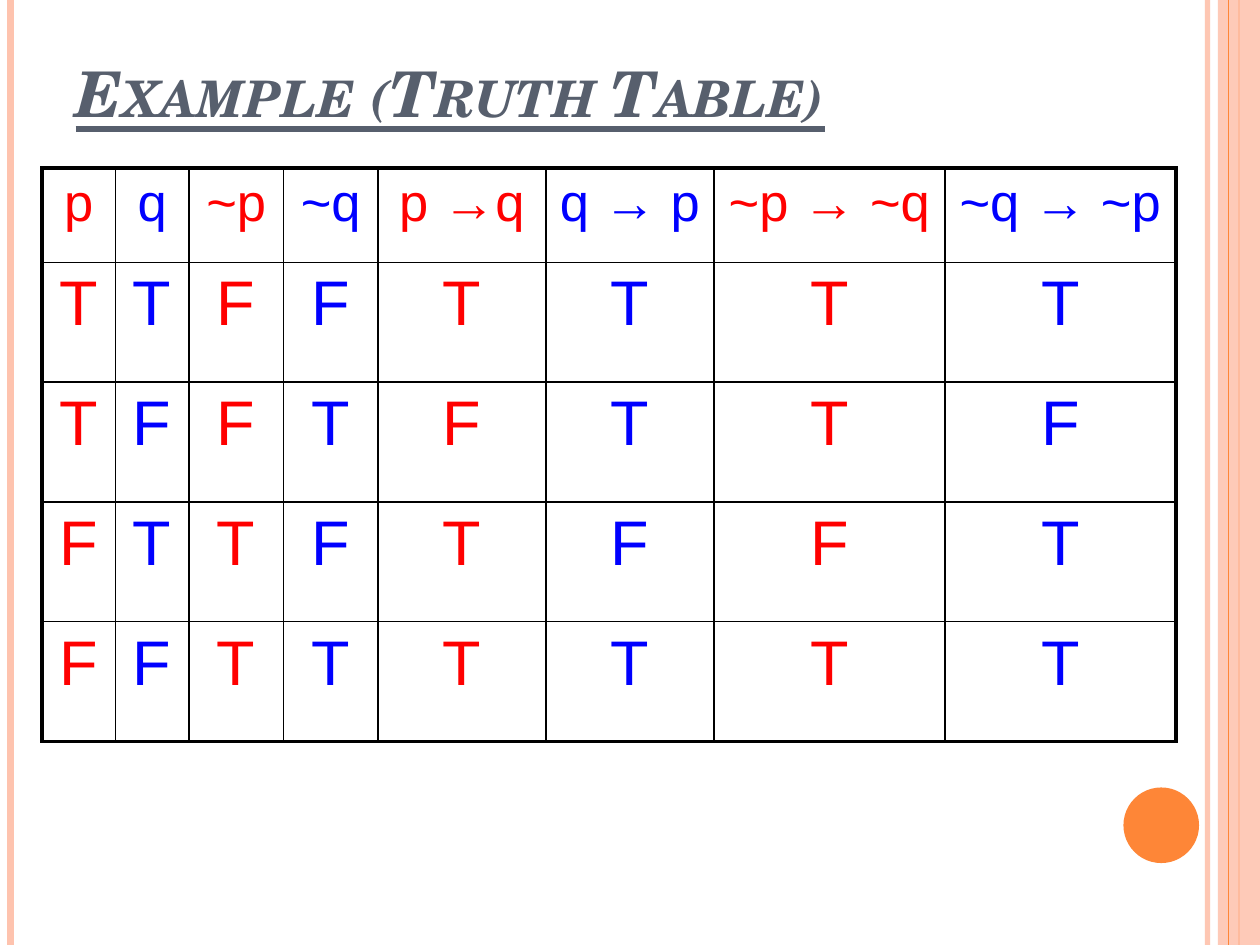
from lxml.etree import SubElement
from pptx import Presentation
from pptx.dml.color import RGBColor
from pptx.enum.shapes import MSO_CONNECTOR, MSO_SHAPE
from pptx.enum.text import MSO_ANCHOR, PP_ALIGN
from pptx.oxml.ns import qn
from pptx.util import Pt

ORANGE, PEACH, SLATE = "FE8637", "FEC3AE", "575F6D"
RED, BLUE, BLACK = "FF0000", "0000FF", "000000"

HEADERS = ["p", "q", "~p", "~q", "p →q", "q → p", "~p → ~q", "~q → ~p"]
TRUTH_ROWS = ["TTFFTTTT", "TFFTFTTF", "FTTFTFFT", "FFTTTTTT"]
COL_WIDTHS = [42, 42, 54, 54, 96, 96, 132, 132]
ROW_HEIGHTS = [54] + [68.4] * 4


def rgb(color):
    return RGBColor.from_string(color)


def set_alpha(fill_parent, percent):
    clr = next(fill_parent.iter(qn("a:srgbClr")))
    SubElement(clr, qn("a:alpha"), val=str(percent * 1000))


def add_rule(s, x, top, height, color, weight, alpha=100):
    line = s.shapes.add_connector(
        MSO_CONNECTOR.STRAIGHT, Pt(x), Pt(top), Pt(x), Pt(top + height))
    line.line.color.rgb = rgb(color)
    line.line.width = Pt(weight)
    spPr = line._element.spPr
    SubElement(spPr, qn("a:effectLst"))
    if alpha < 100:
        set_alpha(spPr, alpha)


def add_block(s, kind, left, top, width, height, color, alpha=100):
    sp = s.shapes.add_shape(kind, Pt(left), Pt(top), Pt(width), Pt(height))
    sp.shadow.inherit = False
    sp.fill.solid()
    sp.fill.fore_color.rgb = rgb(color)
    sp.line.fill.background()
    if alpha < 100:
        set_alpha(sp._element.spPr, alpha)


def add_frame(s, left, top, width, height):
    right = left + width
    add_rule(s, right - 30, top, height, PEACH, 3, 93)
    add_rule(s, left + 6, top, height, PEACH, 4.5)
    add_rule(s, right - 12, top, height, ORANGE, 1.5)
    add_block(s, MSO_SHAPE.RECTANGLE, right - 24, top, 24, height, PEACH, 87)
    add_rule(s, right - 18, top, height, ORANGE, 0.75)
    add_block(s, MSO_SHAPE.OVAL, right - 78, top + height - 90, 43.2, 43.2, ORANGE)


def set_title(s, left, top, width, height):
    title = s.shapes.title
    title.left, title.top = Pt(left), Pt(top)
    title.width, title.height = Pt(width), Pt(height)
    tf = title.text_frame
    tf.text = "Example (Truth Table)"
    tf.vertical_anchor = MSO_ANCHOR.BOTTOM
    p = tf.paragraphs[0]
    p.alignment = PP_ALIGN.LEFT
    font = p.runs[0].font
    font.name, font.size = "TeX Gyre Schola", Pt(36)
    font.bold = font.italic = font.underline = True
    font.color.rgb = rgb(SLATE)
    p.runs[0]._r.get_or_add_rPr().set("cap", "small")


def set_borders(cell, weights):
    tcPr = cell._tc.get_or_add_tcPr()
    for side, weight in weights.items():
        ln = SubElement(tcPr, qn(f"a:ln{side}"), w=str(Pt(weight)))
        fill = SubElement(ln, qn("a:solidFill"))
        SubElement(fill, qn("a:srgbClr"), val=BLACK)


def fill_cell(cell, text, size, color):
    cell.fill.background()
    cell.text_frame.text = text
    p = cell.text_frame.paragraphs[0]
    p.alignment = PP_ALIGN.CENTER
    before = SubElement(p._p.get_or_add_pPr(), qn("a:spcBef"))
    SubElement(before, qn("a:spcPct"), val="20000")
    font = p.runs[0].font
    font.name, font.size, font.bold = "Arial", Pt(size), False
    font.color.rgb = rgb(color)


def add_truth_table(s, left, top):
    rows = [HEADERS] + TRUTH_ROWS
    last_row, last_col = len(rows) - 1, len(HEADERS) - 1
    table = s.shapes.add_table(
        len(rows), len(HEADERS), Pt(left), Pt(top),
        Pt(sum(COL_WIDTHS)), Pt(sum(ROW_HEIGHTS))).table
    table.first_row = table.horz_banding = False
    for col, width in zip(table.columns, COL_WIDTHS):
        col.width = Pt(width)
    for i, values in enumerate(rows):
        table.rows[i].height = Pt(ROW_HEIGHTS[i])
        for j, text in enumerate(values):
            cell = table.cell(i, j)
            outer = {"L": j == 0, "R": j == last_col, "T": i == 0, "B": i == last_row}
            set_borders(cell, {side: 2.25 if edge else 1 for side, edge in outer.items()})
            fill_cell(cell, text, 36 if i else 30, BLUE if j % 2 else RED)


def main():
    prs = Presentation()
    prs.slide_width, prs.slide_height = Pt(720), Pt(540)
    s = prs.slides.add_slide(prs.slide_layouts[5])
    s.background.fill.solid()
    s.background.fill.fore_color.rgb = rgb("FFFFFF")
    add_frame(s, 0, 0, 720, 540)
    set_title(s, 36, 21.6, 648, 56.2)
    add_truth_table(s, 24, 96)
    prs.save("out.pptx")


if __name__ == "__main__":
    main()
